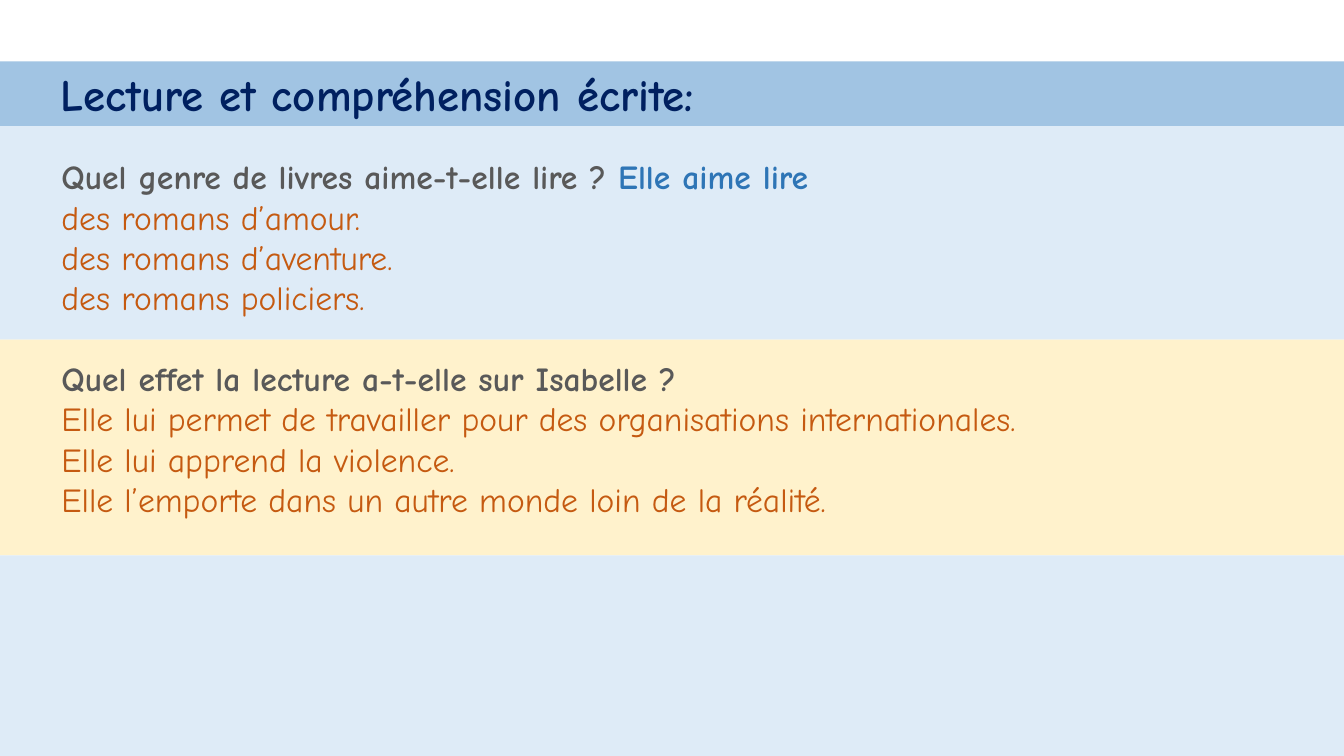
"""Build the reading comprehension slide with two multiple-choice questions."""
from pptx import Presentation
from pptx.dml.color import RGBColor
from pptx.enum.shapes import MSO_SHAPE as Shape
from pptx.enum.text import MSO_ANCHOR as Anchor, MSO_AUTO_SIZE as AutoSize, PP_ALIGN as Align
from pptx.util import Inches, Pt

TITLE = "Lecture et compréhension écrite:"
QUESTIONS = [
    ("Quel genre de livres aime-t-elle lire ? ", "Elle aime lire",
     ["des romans d’amour.", "des romans d’aventure.", "des romans policiers."]),
    ("Quel effet la lecture a-t-elle sur Isabelle ?", "",
     ["Elle lui permet de travailler pour des organisations internationales.",
      "Elle lui apprend la violence.",
      "Elle l’emporte dans un autre monde loin de la réalité."]),
]
FONT = "Comic Neue"
NAVY, GREY, BLUE, ORANGE = "002060", "595959", "2E75B6", "C55A11"
TITLE_FILL = "A1C4E3"
BAND_FILLS = ["DEEBF7", "FFF2CC", "DEEBF7"]
WIDTH, HEIGHT = 13.33, 7.5
TITLE_TOP = 0.61
BAND_EDGES = [1.25, 3.37, 5.51, HEIGHT]
TEXT_TOP, TEXT_WIDTH, TEXT_INDENT = 1.45, 11.57, 0.6
BODY_SIZE, LINE_PITCH = 24, 28.8


def rgb(code):
    """Turn a hex string into a colour."""
    return RGBColor.from_string(code)


def fill(part, code):
    """Give a shape a plain fill."""
    part.fill.solid()
    part.fill.fore_color.rgb = rgb(code)


def style(font, size, code, bold):
    """Set the slide's typeface with a size, colour and weight."""
    font.name, font.size, font.bold = FONT, Pt(size), bold
    font.color.rgb = rgb(code)


def box(left, top, width, height):
    """Convert a box from inches."""
    return [Inches(length) for length in (left, top, width, height)]


def add_bands(slide):
    """Stack the full-width bands below the title."""
    for top, bottom, code in zip(BAND_EDGES, BAND_EDGES[1:], BAND_FILLS):
        band = slide.shapes.add_shape(Shape.RECTANGLE, *box(0, top, WIDTH, bottom - top))
        fill(band, code)
        band.line.fill.background()
        band.shadow.inherit = False


def add_title(slide):
    """Place and format the title bar."""
    title = slide.shapes.title
    title.left, title.top, title.width, title.height = box(
        0, TITLE_TOP, WIDTH, BAND_EDGES[0] - TITLE_TOP)
    fill(title, TITLE_FILL)
    frame = title.text_frame
    frame.text = TITLE
    frame.auto_size = AutoSize.NONE
    frame.vertical_anchor = Anchor.MIDDLE
    frame.margin_left = Inches(TEXT_INDENT)
    heading = frame.paragraphs[0]
    heading.alignment = Align.LEFT
    style(heading.font, 32, NAVY, True)


def add_questions(slide):
    """Write each question followed by its choices."""
    frame = slide.shapes.add_textbox(
        *box(0.01, TEXT_TOP, TEXT_WIDTH, BAND_EDGES[2] - TEXT_TOP)).text_frame
    frame.word_wrap = True
    frame.margin_left = Inches(TEXT_INDENT)
    frame.margin_top = frame.margin_bottom = Inches(0.1)
    for number, (question, answer_start, choices) in enumerate(QUESTIONS):
        prompt = frame.add_paragraph() if number else frame.paragraphs[0]
        if number:
            prompt.space_before = Pt(LINE_PITCH)
        style(prompt.font, BODY_SIZE, GREY, True)
        for words, code in ((question, GREY), (answer_start, BLUE)):
            if words:
                run = prompt.add_run()
                run.text = words
                style(run.font, BODY_SIZE, code, True)
        for choice in choices:
            line = frame.add_paragraph()
            line.text = choice
            style(line.font, BODY_SIZE, ORANGE, False)


def main():
    """Create and save the slide."""
    deck = Presentation()
    deck.slide_width, deck.slide_height = Inches(WIDTH), Inches(HEIGHT)
    slide = deck.slides.add_slide(deck.slide_layouts[5])
    add_bands(slide)
    add_title(slide)
    add_questions(slide)
    deck.save("out.pptx")


if __name__ == "__main__":
    main()
